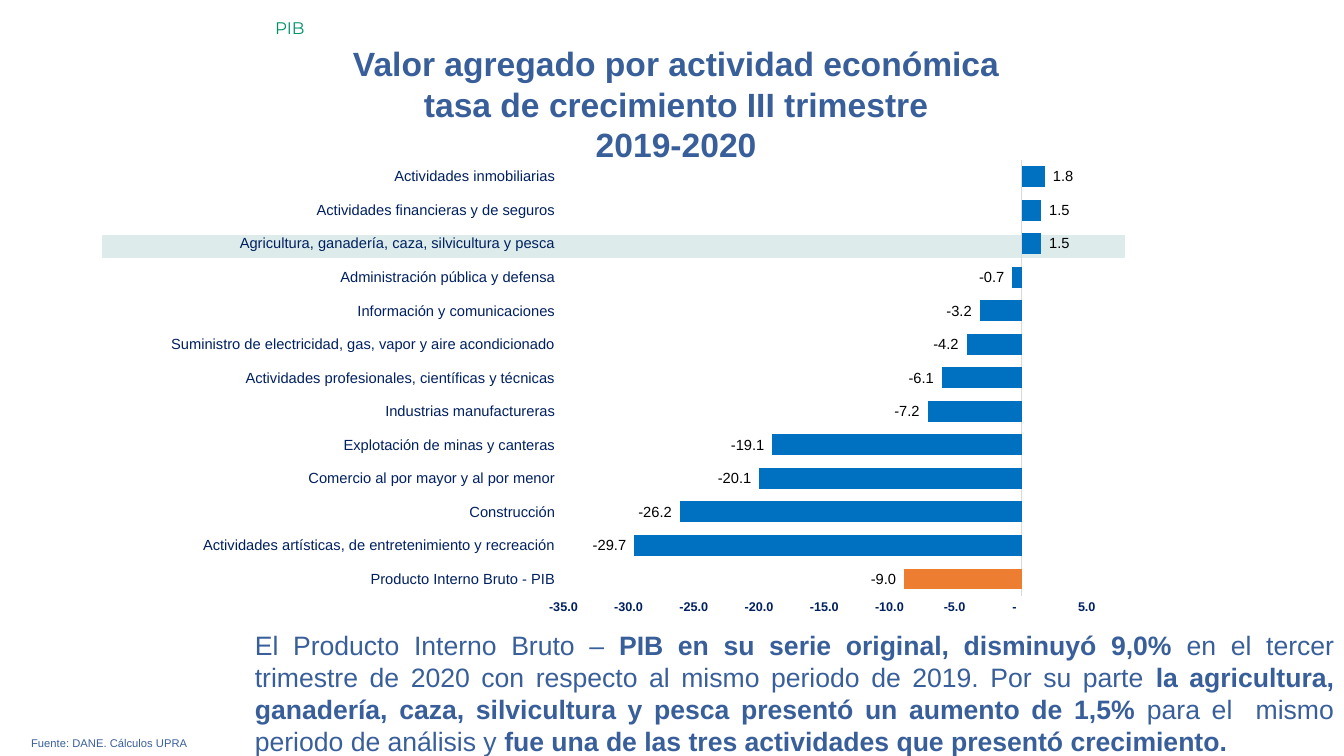
"""Build the slide on value added by economic activity, III quarter 2019-2020."""
from lxml import etree
from pptx import Presentation
from pptx.chart.data import CategoryChartData
from pptx.dml.color import RGBColor
from pptx.enum.chart import XL_CHART_TYPE, XL_LABEL_POSITION, XL_TICK_LABEL_POSITION, XL_TICK_MARK
from pptx.enum.shapes import MSO_SHAPE
from pptx.enum.text import MSO_AUTO_SIZE, PP_ALIGN
from pptx.oxml import parse_xml
from pptx.oxml.ns import nsdecls, qn
from pptx.util import Inches, Pt

THEME = {
    "font": "Arial", "tag_font": "Montserrat",
    "text": "395F9B", "tag": "009267", "band": "117A76", "band_line": "FFFFFF",
    "bar": "0070C0", "total_bar": "ED7D31", "axis_text": "002060",
    "axis_line": "D9D9D9", "label": "000000",
    "title_size": 24, "body_size": 19, "tag_size": 12, "source_size": 8,
    "label_size": 10.5, "value_size": 9, "chart_size": 10,
}
NUMBER_FORMAT = '_-* #,##0.0_-;\\-* #,##0.0_-;_-* "-"??_-;'

presentation = Presentation()
presentation.slide_width, presentation.slide_height = Inches(13.33), Inches(7.5)
slide = presentation.slides.add_slide(presentation.slide_layouts[6])


def place(left, top, width, height):
    """Turn percentages of the slide into lengths."""
    across, down = presentation.slide_width / 100, presentation.slide_height / 100
    return int(left * across), int(top * down), int(width * across), int(height * down)


def style(font, size, color, bold=False, name="font"):
    """Apply theme type to a font."""
    font.name, font.size, font.bold = THEME[name], Pt(THEME[size]), bold
    font.color.rgb = RGBColor.from_string(THEME[color])


title_lines = ["Valor agregado por actividad económica", "tasa de crecimiento III trimestre", "2019-2020"]
body_runs = [
    ("El Producto Interno Bruto – ", False),
    ("PIB en su serie original, disminuyó 9,0% ", True),
    ("en el tercer trimestre de 2020 con respecto al mismo periodo de 2019. Por su parte ", False),
    ("la agricultura, ganadería, caza, silvicultura y pesca presentó un aumento de 1,5%", True),
    (" para el  mismo periodo de análisis y ", False),
    ("fue una de las tres actividades que presentó crecimiento.", True),
]
text_boxes = [
    ((3.38, 5.07, 93.85, 17.47), [[(line, True)] for line in title_lines],
     PP_ALIGN.CENTER, "title_size", "text", "font"),
    ((1.58, 96.75, 96.85, 3.2), [[("Fuente: DANE. Cálculos UPRA", False)]],
     PP_ALIGN.JUSTIFY, "source_size", "text", "font"),
    ((18.23, 82.53, 81.77, 18.4), [body_runs],
     PP_ALIGN.JUSTIFY, "body_size", "text", "font"),
    ((19.73, 1.73, 80.27, 4), [[("PIB", False)]],
     PP_ALIGN.LEFT, "tag_size", "tag", "tag_font"),
]
for area, paragraphs, alignment, size, color, font_name in text_boxes:
    frame = slide.shapes.add_textbox(*place(*area)).text_frame
    frame.word_wrap = True
    frame.auto_size = MSO_AUTO_SIZE.SHAPE_TO_FIT_TEXT
    for index, runs in enumerate(paragraphs):
        paragraph = frame.add_paragraph() if index else frame.paragraphs[0]
        paragraph.alignment = alignment
        for text, bold in runs:
            run = paragraph.add_run()
            run.text = text
            style(run.font, size, color, bold, font_name)

band = slide.shapes.add_shape(MSO_SHAPE.RECTANGLE, *place(7.55, 31.03, 76.2, 3.2))
band.shadow.inherit = False
band.fill.solid()
band.fill.fore_color.rgb = RGBColor.from_string(THEME["band"])
band_color = band.fill._xPr.find(qn("a:solidFill"))[0]
etree.SubElement(band_color, qn("a:alpha")).set("val", "14000")
band.line.color.rgb = RGBColor.from_string(THEME["band_line"])
band.line.width = Pt(1)

activities = [
    ("Producto Interno Bruto - PIB", -9),
    ("Actividades artísticas, de entretenimiento y recreación", -29.7),
    ("Construcción", -26.2),
    ("Comercio al por mayor y al por menor", -20.1),
    ("Explotación de minas y canteras", -19.1),
    ("Industrias manufactureras", -7.2),
    ("Actividades profesionales, científicas y técnicas", -6.1),
    ("Suministro de electricidad, gas, vapor y aire acondicionado", -4.2),
    ("Información y comunicaciones", -3.2),
    ("Administración pública y defensa", -0.7),
    ("Agricultura, ganadería, caza, silvicultura y pesca", 1.5),
    ("Actividades financieras y de seguros", 1.5),
    ("Actividades inmobiliarias", 1.8),
]
growth = CategoryChartData(number_format=NUMBER_FORMAT)
growth.categories = [name for name, rate in activities]
growth.add_series("Series 1", [rate for name, rate in activities])
chart = slide.shapes.add_chart(
    XL_CHART_TYPE.BAR_CLUSTERED, *place(11.15, 19.9, 71.87, 62.67), growth).chart
chart.has_title = chart.has_legend = False
style(chart.font, "chart_size", "label")

plot = chart.plots[0]
plot.gap_width, plot.overlap, plot.vary_by_categories = 61, 65, False
series = plot.series[0]
series.invert_if_negative = False
for bar, color in ((series, "bar"), (series.points[0], "total_bar")):
    bar.format.fill.solid()
    bar.format.fill.fore_color.rgb = RGBColor.from_string(THEME[color])

labels = series.data_labels
labels.show_value = True
labels.position = XL_LABEL_POSITION.OUTSIDE_END
labels.number_format, labels.number_format_is_linked = NUMBER_FORMAT, False
style(labels.font, "label_size", "label")

category_axis, value_axis = chart.category_axis, chart.value_axis
for axis in (category_axis, value_axis):
    axis.has_major_gridlines = False
    axis.major_tick_mark = axis.minor_tick_mark = XL_TICK_MARK.NONE
category_axis.tick_label_position = XL_TICK_LABEL_POSITION.LOW
category_axis.format.line.color.rgb = RGBColor.from_string(THEME["axis_line"])
category_axis.format.line.width = Pt(0.75)
style(category_axis.tick_labels.font, "label_size", "axis_text")
value_axis.minimum_scale, value_axis.maximum_scale, value_axis.major_unit = -35, 5, 5
value_axis.format.line.fill.background()
value_axis.tick_labels.number_format = NUMBER_FORMAT
value_axis.tick_labels.number_format_is_linked = False
style(value_axis.tick_labels.font, "value_size", "axis_text", True)

plot_area = chart._chartSpace.find(".//" + qn("c:plotArea"))
for layout in plot_area.findall(qn("c:layout")):
    plot_area.remove(layout)
plot_area.insert(0, parse_xml(
    f'<c:layout {nsdecls("c")}><c:manualLayout><c:layoutTarget val="inner"/>'
    '<c:xMode val="edge"/><c:yMode val="edge"/><c:x val="0.43"/><c:y val="0.02"/>'
    '<c:w val="0.54"/><c:h val="0.92"/></c:manualLayout></c:layout>'))

presentation.save("out.pptx")
